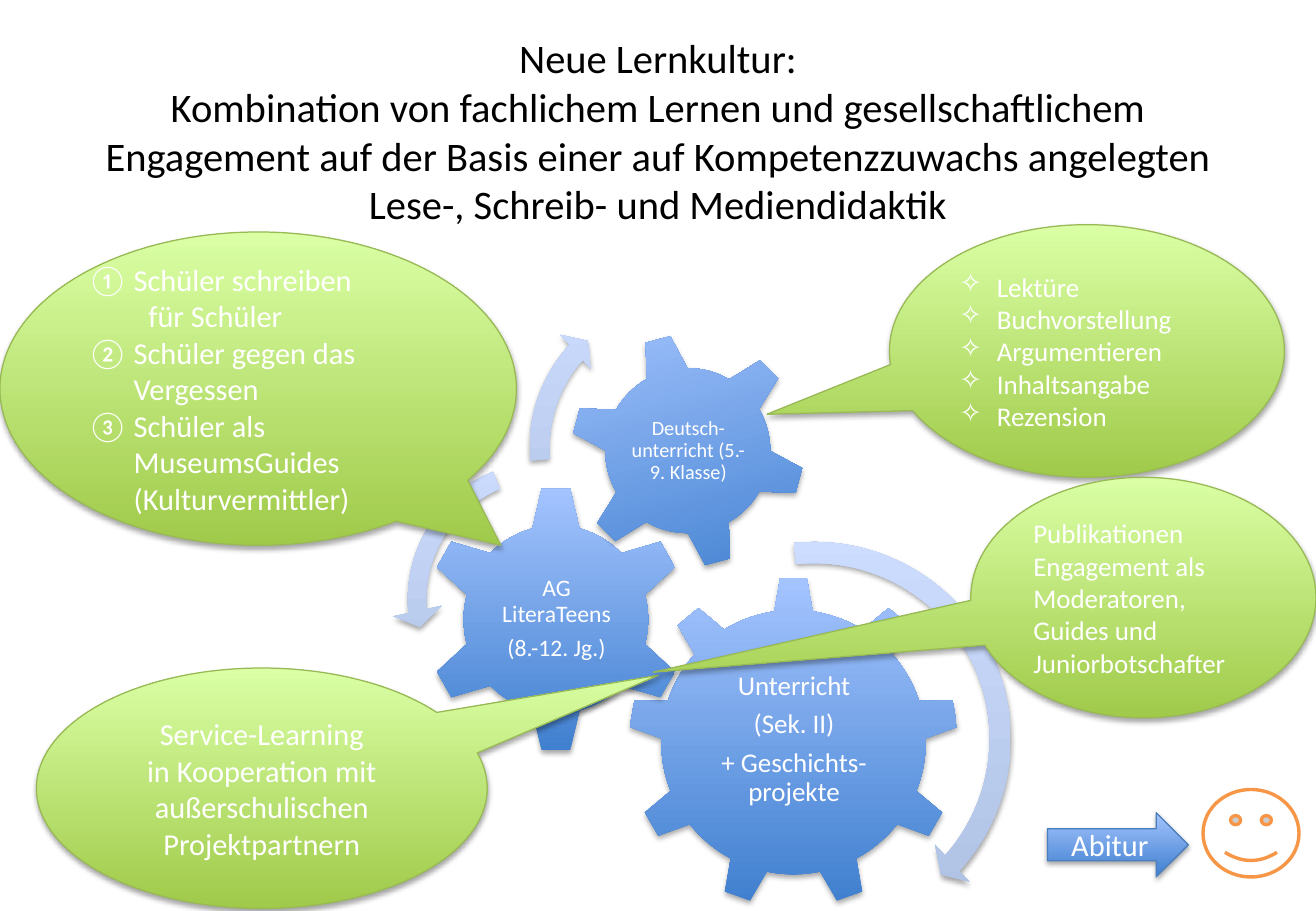
import pptx
import pptx.util
import pptx.dml.color
import pptx.enum.shapes
import pptx.enum.text
import pptx.oxml
import pptx.oxml.ns
from lxml import etree

PX = 9144
FONT = "Calibri"
KIND = pptx.enum.shapes.MSO_SHAPE
ALIGN = pptx.enum.text.PP_ALIGN
MIDDLE = pptx.enum.text.MSO_ANCHOR.MIDDLE
COLORS = {
    "black": "000000", "white": "FFFFFF", "orange": "F79646",
    "blue_dark": "3F7FCE", "blue_light": "A4C4FF", "blue_line": "4B7EBC",
    "pale_dark": "ADBFE1", "pale_light": "CCDDFF",
    "green_dark": "A0CA4A", "green_light": "DAFFA5", "green_line": "98B955",
}
GEARS = [
    (KIND.GEAR_9, (194, 243, 272, 272), 0, (249, 307, 163, 140), 16,
     ["Unterricht", "(Sek. II)", "+ Geschichts-projekte"]),
    (KIND.GEAR_6, (26, 168, 217, 220), 0, (81, 223, 108, 109), 14,
     ["AG LiteraTeens", "(8.-12. Jg.)"]),
    (KIND.GEAR_6, (146, 42, 194, 194), 345, (189, 85, 109, 109), 12,
     ["Deutsch-unterricht (5.-9. Klasse)"]),
]
TURNS = [
    (KIND.CIRCULAR_ARROW, (173, 202, 348, 348), (0.05, 2.99, 25.24, 158.45, 0.06)),
    (KIND.LEFT_CIRCULAR_ARROW, (0, 135, 253, 253), (0.06, 4.3, 104.89, 148.38, 0.08)),
    (KIND.CIRCULAR_ARROW, (102, 0, 273, 273), (0.06, 3.94, 133.14, 105.08, 0.07)),
]


def rgb(name):
    """Return the named colour."""
    return pptx.dml.color.RGBColor.from_string(COLORS[name])


def put(obj, **fmt):
    """Set every format value on the object."""
    for key, value in fmt.items():
        setattr(obj, key, value)


def emu(box, x=0, y=0):
    """Turn a px box, shifted by x and y, into EMU."""
    left, top, width, height = box
    return [v * PX for v in (left + x, top + y, width, height)]


def add_shadow(sp):
    """Give the shape a soft shadow below."""
    sp.shadow.inherit = False
    effects = sp._element.spPr.find(pptx.oxml.ns.qn("a:effectLst"))
    shadow = etree.SubElement(effects, pptx.oxml.ns.qn("a:outerShdw"),
                              blurRad="40000", dist="23000", dir="5400000", rotWithShape="0")
    color = etree.SubElement(shadow, pptx.oxml.ns.qn("a:srgbClr"), val=COLORS["black"])
    etree.SubElement(color, pptx.oxml.ns.qn("a:alpha"), val="35000")


def add_shaded(s, kind, box, hue, adj=(), line=None):
    """Add a preset shape shaded from dark at the bottom to light on top."""
    sp = s.shapes.add_shape(kind, *box)
    for i, value in enumerate(adj):
        sp.adjustments[i] = value
    sp.fill.gradient()
    sp.fill.gradient_angle = 90
    for stop, tone in zip(sp.fill.gradient_stops, ("dark", "light")):
        stop.color.rgb = rgb(f"{hue}_{tone}")
    if line:
        sp.line.color.rgb = rgb(line)
        sp.line.width = pptx.util.Pt(0.75)
    else:
        sp.line.fill.background()
    add_shadow(sp)
    return sp


def set_bullet(p, tag, indent, **attrs):
    """Give the paragraph a hanging bullet."""
    pPr = p._p.get_or_add_pPr()
    pPr.set("marL", str(indent * PX))
    pPr.set("indent", str(-indent * PX))
    etree.SubElement(pPr, pptx.oxml.ns.qn(tag), **attrs)


def write(tf, lines, size, color="white", bullet=None, **fmt):
    """Write one paragraph per line, with a line break at each newline."""
    put(tf, word_wrap=True, vertical_anchor=MIDDLE)
    for i, line in enumerate(lines):
        p = tf.paragraphs[0] if i == 0 else tf.add_paragraph()
        if bullet:
            bullet(p, i)
        put(p, **fmt)
        for j, part in enumerate(line.split("\n")):
            if j:
                p.add_line_break()
            r = p.add_run()
            r.text = part
            put(r.font, name=FONT, size=pptx.util.Pt(size))
            r.font.color.rgb = rgb(color)


def star_bullet(p, i):
    """Mark a subject task with a star."""
    set_bullet(p, "a:buChar", 31, char="✧")


def project_bullet(p, i):
    """Number a project, or indent the second line of the first one."""
    if i == 1:
        p._p.get_or_add_pPr().set("marL", str(50 * PX))
        return
    start = {"startAt": "2"} if i else {}
    set_bullet(p, "a:buAutoNum", 38, type="circleNumDbPlain", **start)


def add_title(s, box):
    """Fill the title placeholder."""
    sp = s.shapes.title
    put(sp, **dict(zip(("left", "top", "width", "height"), emu(box))))
    sp.text_frame.auto_size = pptx.enum.text.MSO_AUTO_SIZE.NONE
    write(sp.text_frame, ["Neue Lernkultur:\nKombination von fachlichem Lernen und "
                          "gesellschaftlichem Engagement auf der Basis einer auf "
                          "Kompetenzzuwachs angelegten Lese-, Schreib- und Mediendidaktik"],
          24, "black", alignment=ALIGN.CENTER)


def add_gears(s, x, y):
    """Draw the three labelled gears and their turning arrows."""
    for kind, box, rotation, label, size, lines in GEARS:
        add_shaded(s, kind, emu(box, x, y), "blue").rotation = rotation
        tf = s.shapes.add_textbox(*emu(label, x, y)).text_frame
        put(tf, **{f"margin_{side}": 2 * PX for side in ("left", "top", "right", "bottom")})
        write(tf, lines, size, alignment=ALIGN.CENTER, line_spacing=0.9,
              space_after=pptx.util.Pt(size * 0.35))
    for kind, box, adj in TURNS:
        add_shaded(s, kind, emu(box, x, y), "pale", adj)


def add_callout(s, box, tip, lines, size, bullet=None, alignment=ALIGN.LEFT):
    """Draw a green speech bubble with its text."""
    sp = add_shaded(s, KIND.OVAL_CALLOUT, emu(box), "green", tip, "green_line")
    write(sp.text_frame, lines, size, bullet=bullet, alignment=alignment)


def add_goal(s, box):
    """Draw the arrow in the given box."""
    sp = add_shaded(s, KIND.RIGHT_ARROW, emu(box), "blue", line="blue_line")
    write(sp.text_frame, ["Abitur"], 18, alignment=ALIGN.CENTER)


def add_smiley(s, box):
    """Draw the smiling face."""
    sp = s.shapes.add_shape(KIND.SMILEY_FACE, *emu(box))
    sp.shadow.inherit = False
    sp.fill.solid()
    sp.fill.fore_color.rgb = rgb("white")
    sp.line.color.rgb = rgb("orange")
    sp.line.width = pptx.util.Pt(2)


def main():
    """Build and save the slide."""
    prs = pptx.Presentation()
    put(prs, slide_width=1083 * PX, slide_height=750 * PX)
    s = prs.slides.add_slide(prs.slide_layouts[5])
    add_title(s, (54, 30, 975, 155))
    add_gears(s, 323, 232)
    add_callout(s, (732, 185, 325, 208), (-0.81, 0.25),
                ["Lektüre", "Buchvorstellung", "Argumentieren", "Inhaltsangabe", "Rezension"],
                16, star_bullet)
    add_callout(s, (0, 191, 425, 258), (0.47, 0.5),
                ["Schüler schreiben", "für Schüler", "Schüler gegen das Vergessen",
                 "Schüler als MuseumsGuides (Kulturvermittler)"], 18, project_bullet)
    add_callout(s, (30, 550, 371, 198), (0.88, -0.47),
                ["Service-Learning", "in Kooperation mit außerschulischen Projektpartnern"],
                18, alignment=ALIGN.CENTER)
    add_goal(s, (862, 669, 116, 53))
    add_callout(s, (799, 393, 284, 198), (-1.42, 0.31),
                ["Publikationen Engagement als Moderatoren, Guides und Juniorbotschafter"], 16)
    add_smiley(s, (990, 650, 79, 72))
    prs.save("out.pptx")


if __name__ == "__main__":
    main()
